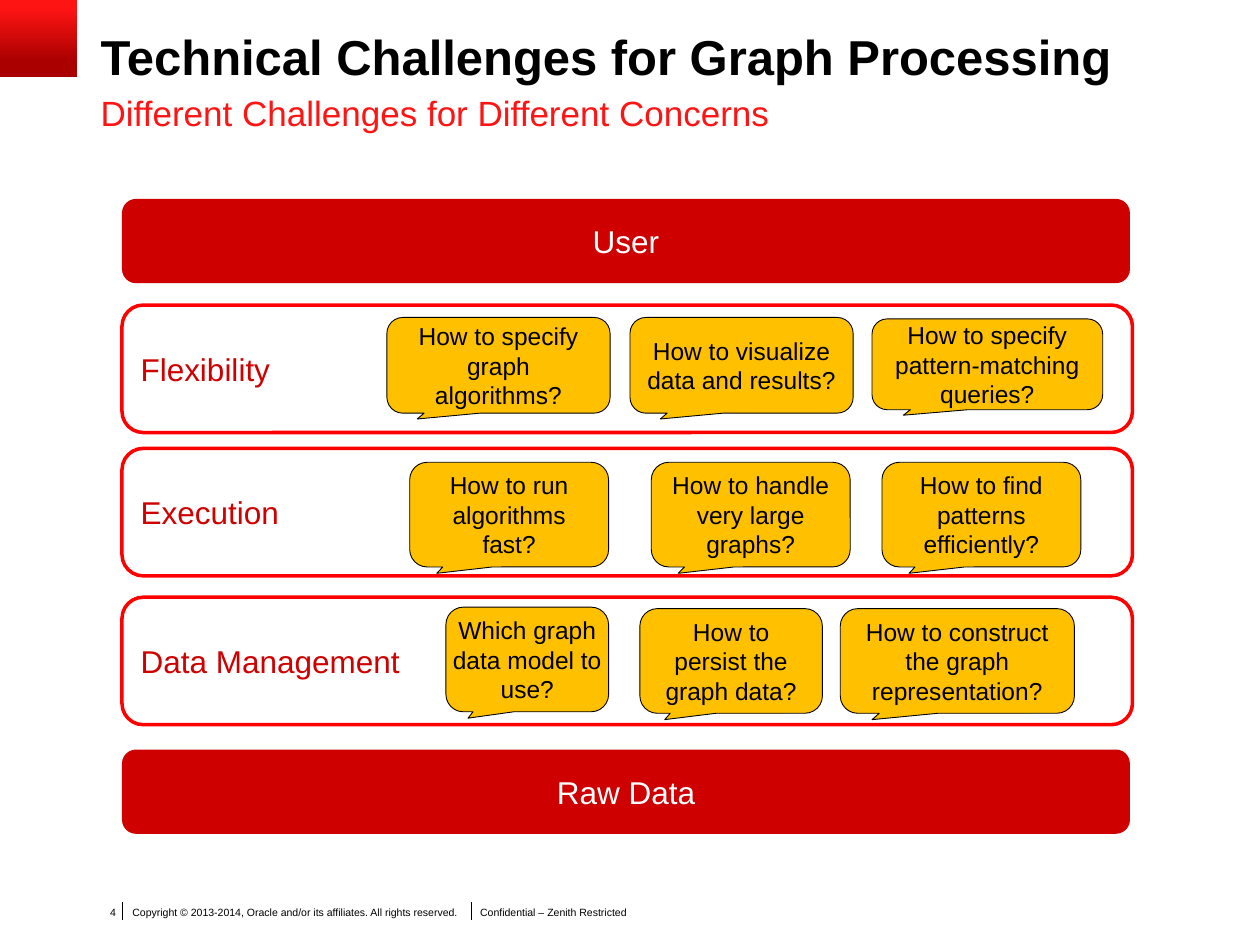
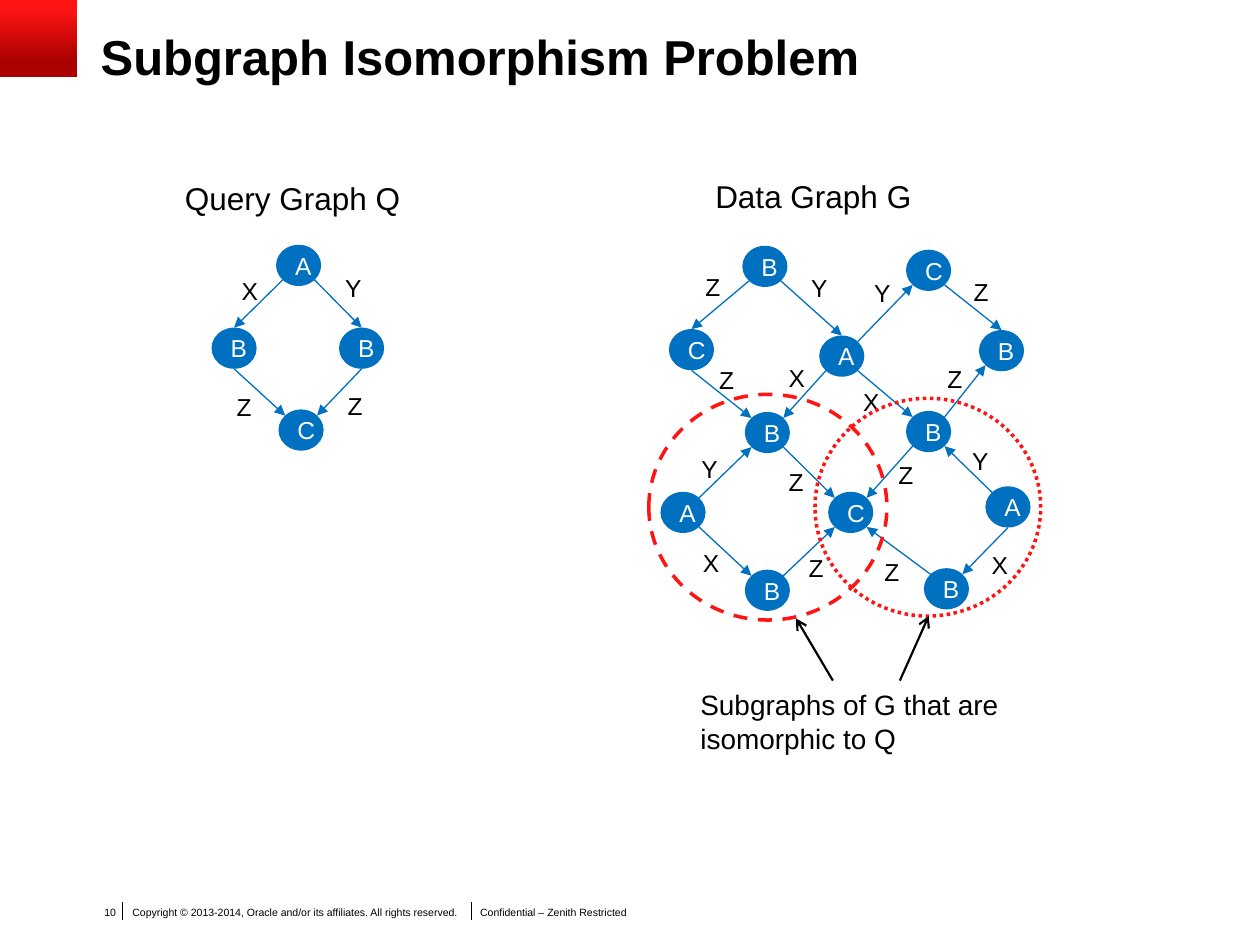
from dataclasses import dataclass
from math import sqrt

from lxml import etree
from pptx import Presentation
from pptx.dml.color import RGBColor
from pptx.enum.dml import MSO_LINE
from pptx.enum.shapes import MSO_CONNECTOR, MSO_SHAPE
from pptx.enum.text import MSO_ANCHOR, MSO_AUTO_SIZE, PP_ALIGN
from pptx.oxml.ns import qn
from pptx.util import Cm, Pt

RECT, ROUND, OVAL = MSO_SHAPE.RECTANGLE, MSO_SHAPE.ROUNDED_RECTANGLE, MSO_SHAPE.OVAL
CALLOUT = MSO_SHAPE.ROUNDED_RECTANGULAR_CALLOUT
STRAIGHT = MSO_CONNECTOR.STRAIGHT
DASH, DOT = MSO_LINE.DASH, MSO_LINE.ROUND_DOT
LEFT, CENTER, RIGHT = PP_ALIGN.LEFT, PP_ALIGN.CENTER, PP_ALIGN.RIGHT
TOP, MIDDLE = MSO_ANCHOR.TOP, MSO_ANCHOR.MIDDLE


@dataclass(frozen=True)
class Theme:
    font: str = "Arial"
    black: str = "000000"
    white: str = "FFFFFF"
    accent: str = "FF1414"
    accent_dark: str = "AA0000"
    band: str = "CE0000"
    outline: str = "FF0000"
    callout: str = "FFC000"
    node: str = "0070C0"
    title_size: float = 28
    subtitle_size: float = 20
    heading_size: float = 18
    note_size: float = 16
    body_size: float = 14
    footer_size: float = 6


THEME = Theme()

COPYRIGHT = "Copyright © 2013-2014, Oracle and/or its affiliates. All rights reserved."
CONFIDENTIAL = "Confidential – Zenith Restricted"

BAND_LEFT = 2.46
END_BANDS = [("User", 4.01), ("Raw Data", 15.11)]
# Band: label, top, callouts as (text, left, top, width, height)
CONCERNS = [
    ("Flexibility", 6.15, [
        ("How to specify graph algorithms?", 7.8, 6.4, 4.5, 1.93),
        ("How to visualize data and results?", 12.7, 6.4, 4.5, 1.93),
        ("How to specify pattern-matching queries?", 17.58, 6.43, 4.65, 1.83),
    ]),
    ("Execution", 9.04, [
        ("How to run algorithms fast?", 8.26, 9.32, 4.01, 2.11),
        ("How to handle very large graphs?", 13.13, 9.32, 4.01, 2.11),
        ("How to find patterns efficiently?", 17.78, 9.32, 4.01, 2.11),
    ]),
    ("Data Management", 12.04, [
        ("Which graph data model to use?", 8.99, 12.24, 3.28, 2.11),
        ("How to persist the graph data?", 12.9, 12.27, 3.68, 2.11),
        ("How to construct the graph representation?", 16.94, 12.27, 4.72, 2.11),
    ]),
]

NODE_W, NODE_H = 0.91, 0.83
DIAGONAL = 1 / sqrt(2)
# Unit offsets of the points on a node where edges meet it
SITES = {
    "n": (0, -1), "s": (0, 1),
    "nw": (-DIAGONAL, -DIAGONAL), "ne": (DIAGONAL, -DIAGONAL),
    "sw": (-DIAGONAL, DIAGONAL), "se": (DIAGONAL, DIAGONAL),
}

# Nodes: name -> centre; the first letter of the name is the node label
# Edges: from node, site, to node, site, label, label position
QUERY_NODES = {"A": (6.02, 5.35), "B1": (4.72, 7.02), "B2": (7.29, 7.02), "C": (6.07, 8.67)}
QUERY_EDGES = [
    ("A", "sw", "B1", "n", "X", (4.62, 5.44)),
    ("A", "se", "B2", "n", "Y", (6.71, 5.38)),
    ("B1", "s", "C", "nw", "Z", (4.52, 7.77)),
    ("B2", "s", "C", "ne", "Z", (6.76, 7.75)),
]
DATA_NODES = {
    "B1": (15.42, 5.37), "C1": (13.94, 7.05), "A1": (16.97, 7.18),
    "C2": (18.72, 5.45), "B2": (20.19, 7.07), "B3": (15.47, 8.72),
    "B4": (18.72, 8.7), "A2": (13.77, 10.33), "C3": (17.15, 10.33),
    "A3": (20.32, 10.22), "B5": (15.47, 11.9), "B6": (19.08, 11.87),
}
DATA_EDGES = [
    ("B1", "sw", "C1", "n", "Z", (13.97, 5.36)),
    ("B1", "se", "A1", "n", "Y", (16.1, 5.38)),
    ("A1", "ne", "C2", "sw", "Y", (17.37, 5.49)),
    ("C2", "se", "B2", "n", "Z", (19.38, 5.46)),
    ("C1", "s", "B3", "nw", "Z", (14.25, 7.24)),
    ("A1", "sw", "B3", "ne", "X", (15.65, 7.19)),
    ("A1", "se", "B4", "nw", "X", (17.15, 7.67)),
    ("B4", "ne", "B2", "sw", "Z", (18.85, 7.21)),
    ("A2", "ne", "B3", "sw", "Y", (13.89, 9.02)),
    ("B3", "se", "C3", "nw", "Z", (15.65, 9.3)),
    ("B4", "sw", "C3", "ne", "Z", (17.86, 9.14)),
    ("A3", "nw", "B4", "se", "Y", (19.35, 8.86)),
    ("A2", "se", "B5", "nw", "X", (13.92, 10.92)),
    ("B5", "ne", "C3", "sw", "Z", (16.05, 11.02)),
    ("B6", "nw", "C3", "se", "Z", (17.58, 11.1)),
    ("A3", "s", "B6", "ne", "X", (19.74, 10.97)),
]


def rgb(color):
    return RGBColor.from_string(color)


def place(s, left, top, width, height):
    s.left, s.top, s.width, s.height = Cm(left), Cm(top), Cm(width), Cm(height)


def write(s, text, size, color, align=LEFT, anchor=TOP, bold=False, insets=None):
    """Fill a shape with one run; insets is (side, top and bottom) in cm."""
    tf = s.text_frame
    tf.word_wrap = True
    tf.vertical_anchor = anchor
    if insets:
        tf.margin_left = tf.margin_right = Cm(insets[0])
        tf.margin_top = tf.margin_bottom = Cm(insets[1])
    p = tf.paragraphs[0]
    p.alignment = align
    r = p.add_run()
    r.text = text
    r.font.name, r.font.size, r.font.bold = THEME.font, Pt(size), bold
    r.font.color.rgb = rgb(color)
    return p


def add_text(slide, box, text, size, color=THEME.black, align=LEFT, insets=None):
    s = slide.shapes.add_textbox(0, 0, 0, 0)
    place(s, *box)
    write(s, text, size, color, align, insets=insets)
    return s


def add_box(slide, kind, box, fill=None, line=None, weight=1, dash=None):
    s = slide.shapes.add_shape(kind, 0, 0, 0, 0)
    place(s, *box)
    s.shadow.inherit = False
    if fill:
        s.fill.solid()
        s.fill.fore_color.rgb = rgb(fill)
    else:
        s.fill.background()
    if line:
        s.line.color.rgb = rgb(line)
        s.line.width = Pt(weight)
        if dash:
            s.line.dash_style = dash
    else:
        s.line.fill.background()
    return s


def add_line(slide, start, end, color, weight, head=None):
    s = slide.shapes.add_connector(STRAIGHT, *(Cm(v) for v in (*start, *end)))
    s.line.color.rgb = rgb(color)
    s.line.width = Pt(weight)
    if head:
        etree.SubElement(s.line._get_or_add_ln(), qn("a:tailEnd"), type=head)
    etree.SubElement(s._element.spPr, qn("a:effectLst"))


def add_corner(slide):
    s = add_box(slide, RECT, (0, 0, 1.55, 1.55))
    s.fill.gradient()
    s.fill.gradient_angle = 90
    stops = ((0.2, THEME.accent_dark), (0.9, THEME.accent))
    for stop, (position, color) in zip(s.fill.gradient_stops, stops):
        stop.position = position
        stop.color.rgb = rgb(color)


def add_footer(slide, number):
    size = THEME.footer_size
    for x in (2.46, 9.5):
        add_line(slide, (x, 18.19), (x, 18.54), THEME.black, 0.5)
    add_text(slide, (2.57, 18.21, 7.67, 0.81), COPYRIGHT, size, insets=(0.1, 0.05))
    add_text(slide, (9.58, 18.21, 6.91, 0.81), CONFIDENTIAL, size, insets=(0.1, 0.05))
    s = add_text(slide, (1.8, 18.14, 0.79, 0.51), str(number), size, align=RIGHT)
    s.text_frame.word_wrap = False


def add_slide(prs, title, number):
    slide = prs.slides.add_slide(prs.slide_layouts[5])
    add_footer(slide, number)
    add_corner(slide)
    s = slide.shapes.title
    place(s, 2.03, 0.66, 22.07, 1.32)
    s.text_frame.auto_size = MSO_AUTO_SIZE.NONE
    p = write(s, title, THEME.title_size, THEME.black, bold=True, insets=(0, 0))
    p.line_spacing = 0.9
    return slide


def add_callout(slide, text, left, top, width, height):
    s = add_box(slide, CALLOUT, (left, top, width, height), THEME.callout, THEME.black, 0.5)
    for i, value in enumerate((-0.364, 0.561, 0.167)):
        s.adjustments[i] = value
    side = 0.03 if width < 3.5 else 0.25
    write(s, text, THEME.body_size, THEME.black, CENTER, MIDDLE, insets=(side, 0.13))


def site_point(center, site):
    dx, dy = SITES[site]
    return center[0] + dx * NODE_W / 2, center[1] + dy * NODE_H / 2


def add_graph(slide, nodes, edges):
    for name, (x, y) in nodes.items():
        box = (x - NODE_W / 2, y - NODE_H / 2, NODE_W, NODE_H)
        s = add_box(slide, OVAL, box, THEME.node)
        write(s, name[0], THEME.body_size, THEME.white, CENTER, MIDDLE)
    for source, leave, target, arrive, label, position in edges:
        add_line(slide, site_point(nodes[source], leave), site_point(nodes[target], arrive),
                 THEME.node, 0.75, "triangle")
        add_text(slide, (*position, 0.71, 0.86), label, THEME.body_size)


def build_challenges(prs):
    slide = add_slide(prs, "Technical Challenges for Graph Processing", 4)
    add_text(slide, (2.03, 1.85, 22.07, 1.24), "Different Challenges for Different Concerns",
             THEME.subtitle_size, THEME.accent, insets=(0, 0))
    for label, top in END_BANDS:
        s = add_box(slide, ROUND, (BAND_LEFT, top, 20.32, 1.7), THEME.band)
        write(s, label, THEME.heading_size, THEME.white, CENTER, MIDDLE)
    for label, top, callouts in CONCERNS:
        s = add_box(slide, ROUND, (BAND_LEFT, top, 20.37, 2.57), THEME.white, THEME.outline, 2)
        write(s, label, THEME.heading_size, THEME.band, anchor=MIDDLE)
        for callout in callouts:
            add_callout(slide, *callout)


def build_isomorphism(prs):
    slide = add_slide(prs, "Subgraph Isomorphism Problem", 10)
    add_graph(slide, QUERY_NODES, QUERY_EDGES)
    add_graph(slide, DATA_NODES, DATA_EDGES)
    add_box(slide, OVAL, (13.08, 7.95, 4.8, 4.55), line=THEME.accent, weight=2, dash=DASH)
    add_box(slide, OVAL, (16.43, 8.03, 4.55, 4.39), line=THEME.accent, weight=2, dash=DOT)
    add_text(slide, (3.48, 3.48, 5.16, 1.02), "Query Graph Q", THEME.heading_size)
    add_text(slide, (14.17, 3.45, 5.16, 1.02), "Data Graph G", THEME.heading_size)
    add_text(slide, (13.87, 13.74, 6.68, 1.63), "Subgraphs of G that are isomorphic to Q",
             THEME.note_size)
    for start, end in (((16.79, 13.72), (16.05, 12.47)), ((18.14, 13.72), (18.72, 12.42))):
        add_line(slide, start, end, THEME.black, 1.25, "arrow")


def main():
    prs = Presentation()
    prs.slide_width, prs.slide_height = Cm(25.4), Cm(19.05)
    build_challenges(prs)
    build_isomorphism(prs)
    prs.save("out.pptx")


if __name__ == "__main__":
    main()
